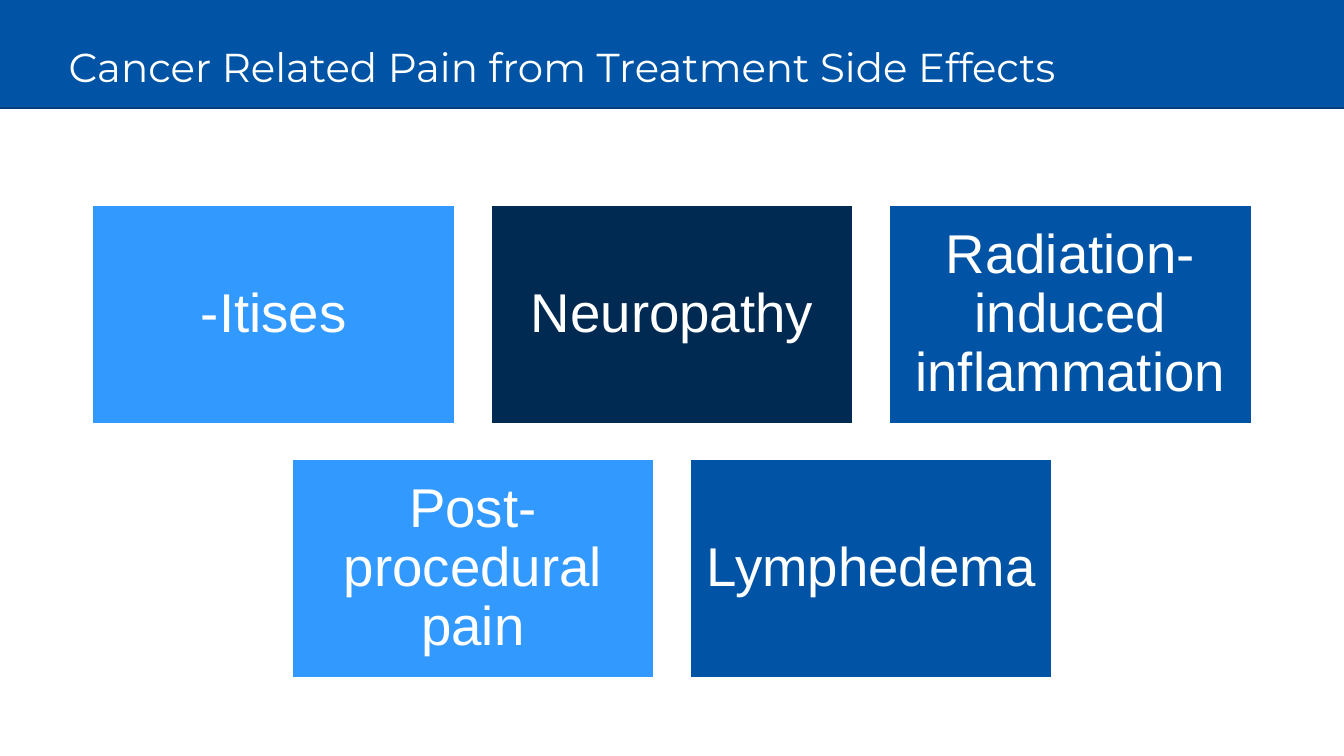
from pptx import Presentation, util as u
from pptx.dml.color import RGBColor
from pptx.enum import shapes, text
from pptx.oxml import ns
from lxml import etree

WHITE = RGBColor(0xFF, 0xFF, 0xFF)
SKY = RGBColor(0x32, 0x99, 0xFE)
NAVY = RGBColor(0x00, 0x2A, 0x52)
BLUE = RGBColor(0x01, 0x54, 0xA5)
DEEP_BLUE = RGBColor(0x01, 0x3E, 0x7A)

WIDTH, HEIGHT = u.Inches(13.33), u.Inches(7.5)
BAND_HEIGHT = u.Inches(1.07)
CARD_WIDTH, CARD_HEIGHT = u.Inches(3.59), u.Inches(2.16)
GAP = u.Inches(0.36)
GRID_TOP = u.Inches(2.04)

SIDE_EFFECTS = [
    [("-Itises", SKY), ("Neuropathy", NAVY), ("Radiation-induced inflammation", BLUE)],
    [("Post-procedural pain", SKY), ("Lymphedema", BLUE)],
]


class SideEffectSlide:
    def __init__(self, deck):
        self.slide = deck.slides.add_slide(deck.slide_layouts[5])
        self.shapes = self.slide.shapes

    def rectangle(self, left, top, width, height, color):
        box = self.shapes.add_shape(shapes.MSO_SHAPE.RECTANGLE, left, top, width, height)
        box.shadow.inherit = False
        box.fill.solid()
        box.fill.fore_color.rgb = color
        return box

    def set_text(self, frame, words, font, size, align):
        frame.word_wrap = True
        frame.auto_size = text.MSO_AUTO_SIZE.NONE
        frame.vertical_anchor = text.MSO_ANCHOR.MIDDLE
        frame.text = words
        paragraph = frame.paragraphs[0]
        paragraph.alignment = align
        paragraph.line_spacing = 0.9
        paragraph.font.name = font
        paragraph.font.size = u.Pt(size)
        paragraph.font.color.rgb = WHITE

    def header_band(self):
        """Lay the band and its darker lower edge behind the title."""
        band = self.rectangle(0, 0, WIDTH, BAND_HEIGHT, BLUE)
        band.line.fill.background()
        edge = self.shapes.add_connector(
            shapes.MSO_CONNECTOR.STRAIGHT, 0, BAND_HEIGHT, WIDTH, BAND_HEIGHT)
        edge.line.color.rgb = DEEP_BLUE
        edge.line.width = u.Pt(1)
        etree.SubElement(edge._element.spPr, ns.qn("a:effectLst"))
        title = self.shapes.title._element
        title.addprevious(band._element)
        title.addprevious(edge._element)

    def title(self, words):
        title = self.shapes.title
        title.left, title.top = u.Inches(0.58), u.Inches(0.34)
        title.width, title.height = u.Inches(11.5), u.Inches(0.7)
        self.set_text(title.text_frame, words, "Montserrat", 28.8, text.PP_ALIGN.LEFT)

    def card(self, left, top, words, color):
        card = self.rectangle(left, top, CARD_WIDTH, CARD_HEIGHT, color)
        card.line.color.rgb = WHITE
        card.line.width = u.Pt(1)
        frame = card.text_frame
        frame.margin_left = frame.margin_right = u.Inches(0.16)
        frame.margin_top = frame.margin_bottom = u.Inches(0.16)
        self.set_text(frame, words, "Arial", 39, text.PP_ALIGN.CENTER)

    def card_grid(self, rows):
        """Place each row of cards centred across the slide."""
        for row, cards in enumerate(rows):
            row_width = len(cards) * (CARD_WIDTH + GAP) - GAP
            start = (WIDTH - row_width) // 2
            top = GRID_TOP + row * (CARD_HEIGHT + GAP)
            for column, (words, color) in enumerate(cards):
                self.card(start + column * (CARD_WIDTH + GAP), top, words, color)


def main():
    deck = Presentation()
    deck.slide_width, deck.slide_height = WIDTH, HEIGHT
    page = SideEffectSlide(deck)
    page.header_band()
    page.title("Cancer Related Pain from Treatment Side Effects")
    page.card_grid(SIDE_EFFECTS)
    deck.save("out.pptx")


if __name__ == "__main__":
    main()
